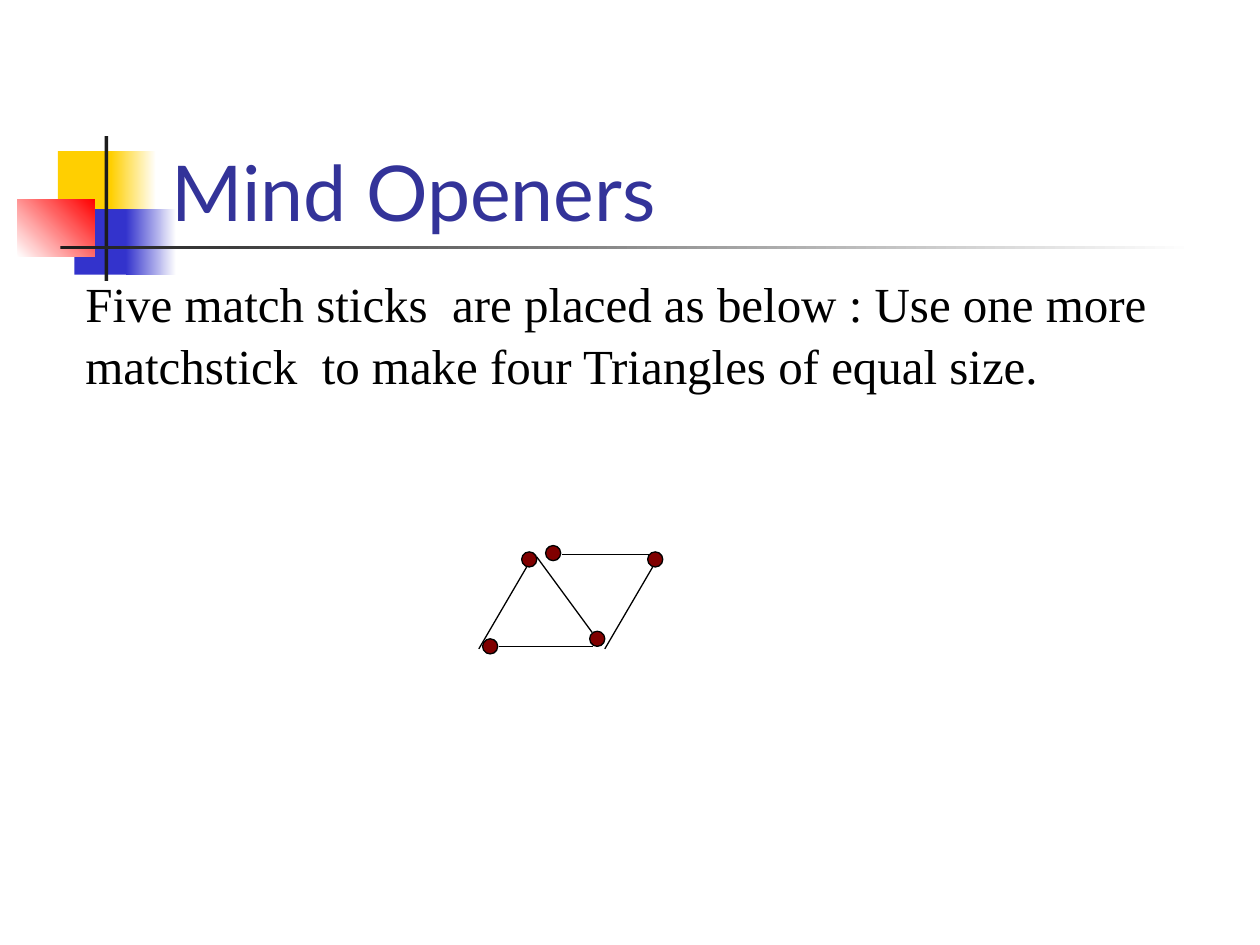
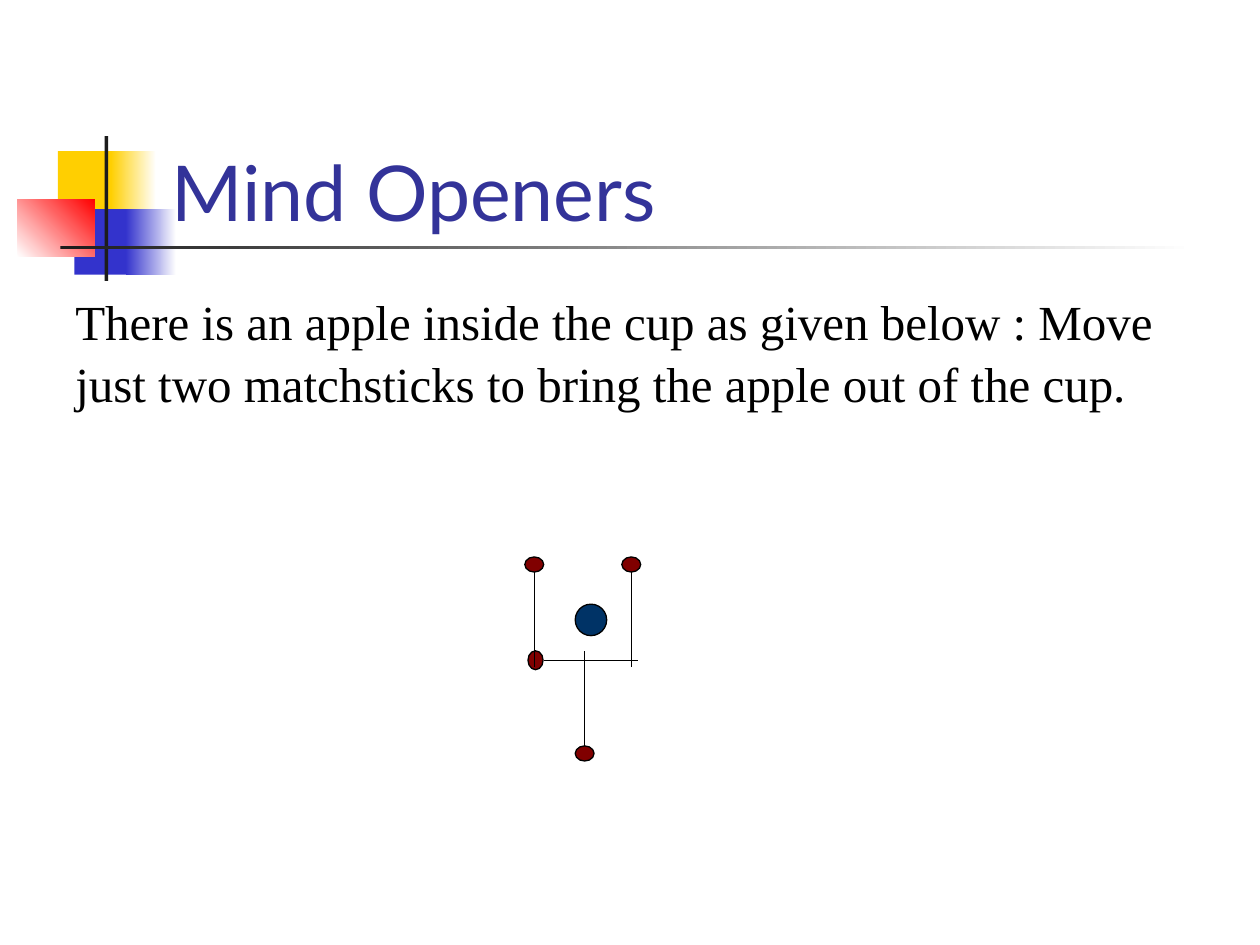
import dataclasses
import typing

import lxml.etree
import pptx
import pptx.dml.color
import pptx.enum.shapes
import pptx.enum.text
import pptx.oxml.ns
import pptx.shapes.autoshape
import pptx.slide
import pptx.util

Inches = pptx.util.Inches
Pair = tuple[float, float]

WHITE, BLACK, INK = "FFFFFF", "000000", "1C1C1C"
YELLOW, BLUE, RED = "FFCF01", "3333CC", "FF0000"
TITLE_BLUE, MATCH_RED, APPLE_BLUE = "333399", "800000", "003366"

TITLE_FONT = {"name": "Lato", "size": pptx.util.Pt(44)}
BODY_FONT = {"name": "Times New Roman", "size": pptx.util.Pt(28)}
OUTLINE = pptx.util.Pt(0.75)


@dataclasses.dataclass(frozen=True)
class Block:
    left: float
    top: float
    width: float
    height: float
    color: str
    end: str = ""
    angle: float = 0


@dataclasses.dataclass(frozen=True)
class Match:
    head: Pair
    start: Pair
    tip: Pair
    size: Pair = (0.12, 0.12)


@dataclasses.dataclass(frozen=True)
class Puzzle:
    text: str
    left: float
    top: float
    matches: tuple[Match, ...]
    apple: typing.Optional[Pair] = None


BLOCKS = (
    Block(0.46, 1.2, 0.48, 0.52, YELLOW),
    Block(0.88, 1.2, 0.36, 0.52, YELLOW, WHITE),
    Block(0.59, 1.66, 0.46, 0.52, BLUE),
    Block(1, 1.66, 0.4, 0.52, BLUE, WHITE),
    Block(0.14, 1.58, 0.61, 0.46, WHITE, RED, 45),
    Block(0.83, 1.08, 0.03, 1.15, INK),
    Block(0.48, 1.95, 9, 0.03, INK, WHITE),
)

WIDE, TALL = (0.15, 0.12), (0.12, 0.15)

PUZZLES = (
    Puzzle(
        "Five match sticks  are placed as below : Use one more "
        "matchstick  to make four Triangles of equal size.",
        0.58, 2.1,
        (
            Match((4.39, 4.39), (4.46, 4.4), (5.21, 4.4)),
            Match((3.89, 5.13), (3.96, 5.13), (4.71, 5.13)),
            Match((4.2, 4.44), (4.18, 4.5), (3.8, 5.15)),
            Match((5.2, 4.44), (5.18, 4.5), (4.8, 5.15)),
            Match((4.74, 5.07), (4.7, 5.02), (4.26, 4.42)),
        ),
    ),
    Puzzle(
        "There is an apple inside the cup as given below : Move "
        "just two matchsticks to bring the apple out of the cup.",
        0.5, 2.24,
        (
            Match((4.25, 5.24), (4.32, 5.24), (5.06, 5.24), TALL),
            Match((4.24, 4.48), (4.24, 4.54), (4.24, 5.29), WIDE),
            Match((5.01, 4.48), (5.01, 4.54), (5.01, 5.29), WIDE),
            Match((4.64, 5.98), (4.64, 5.92), (4.64, 5.17), WIDE),
        ),
        apple=(4.69, 4.92),
    ),
)


def rgb(color: str) -> pptx.dml.color.RGBColor:
    return pptx.dml.color.RGBColor.from_string(color)


def add_block(s: pptx.slide.Slide, block: Block) -> None:
    sp = s.shapes.add_shape(
        pptx.enum.shapes.MSO_SHAPE.RECTANGLE,
        Inches(block.left), Inches(block.top),
        Inches(block.width), Inches(block.height),
    )
    sp.shadow.inherit = False
    sp.line.fill.background()
    if block.end:
        sp.fill.gradient()
        sp.fill.gradient_angle = block.angle
        for stop, color in zip(sp.fill.gradient_stops, (block.color, block.end)):
            stop.color.rgb = rgb(color)
    else:
        sp.fill.solid()
        sp.fill.fore_color.rgb = rgb(block.color)


def add_text(
    s: pptx.slide.Slide, text: str, left: float, top: float, width: float,
    height: float, font: dict[str, typing.Any], color: str,
    anchor: pptx.enum.text.MSO_ANCHOR, spacing: float,
) -> None:
    sp = s.shapes.add_textbox(Inches(left), Inches(top), Inches(width), Inches(height))
    tf = sp.text_frame
    tf.word_wrap = True
    tf.vertical_anchor = anchor
    p = tf.paragraphs[0]
    p.line_spacing = spacing
    r = p.add_run()
    r.text = text
    for name, value in font.items():
        setattr(r.font, name, value)
    r.font.color.rgb = rgb(color)


def add_dot(shapes: typing.Any, center: Pair, size: Pair, color: str) -> None:
    (x, y), (w, h) = center, size
    sp = shapes.add_shape(
        pptx.enum.shapes.MSO_SHAPE.OVAL,
        Inches(x - w / 2), Inches(y - h / 2), Inches(w), Inches(h),
    )
    sp.shadow.inherit = False
    sp.fill.solid()
    sp.fill.fore_color.rgb = rgb(color)
    sp.line.color.rgb = rgb(BLACK)
    sp.line.width = OUTLINE


def add_match(shapes: typing.Any, match: Match) -> None:
    add_dot(shapes, match.head, match.size, MATCH_RED)
    stick = shapes.add_connector(
        pptx.enum.shapes.MSO_CONNECTOR.STRAIGHT,
        *(Inches(v) for v in match.start + match.tip),
    )
    stick.line.color.rgb = rgb(BLACK)
    stick.line.width = OUTLINE
    lxml.etree.SubElement(stick._element.spPr, pptx.oxml.ns.qn("a:effectLst"))


def add_puzzle(s: pptx.slide.Slide, puzzle: Puzzle) -> None:
    for block in BLOCKS:
        add_block(s, block)
    anchors = pptx.enum.text.MSO_ANCHOR
    add_text(s, "Mind Openers", 1.26, 0.68, 8.52, 1.25,
             TITLE_FONT, TITLE_BLUE, anchors.BOTTOM, 1.0)
    add_text(s, puzzle.text, puzzle.left, puzzle.top, 8.8, 1.5,
             BODY_FONT, BLACK, anchors.TOP, 1.05)
    shapes = s.shapes.add_group_shape().shapes
    for match in puzzle.matches:
        add_match(shapes, match)
    if puzzle.apple:
        add_dot(shapes, puzzle.apple, (0.25, 0.25), APPLE_BLUE)


def main() -> None:
    prs = pptx.Presentation()
    prs.slide_width, prs.slide_height = Inches(10), Inches(7.5)
    for puzzle in PUZZLES:
        add_puzzle(prs.slides.add_slide(prs.slide_layouts[6]), puzzle)
    prs.save("out.pptx")


if __name__ == "__main__":
    main()
